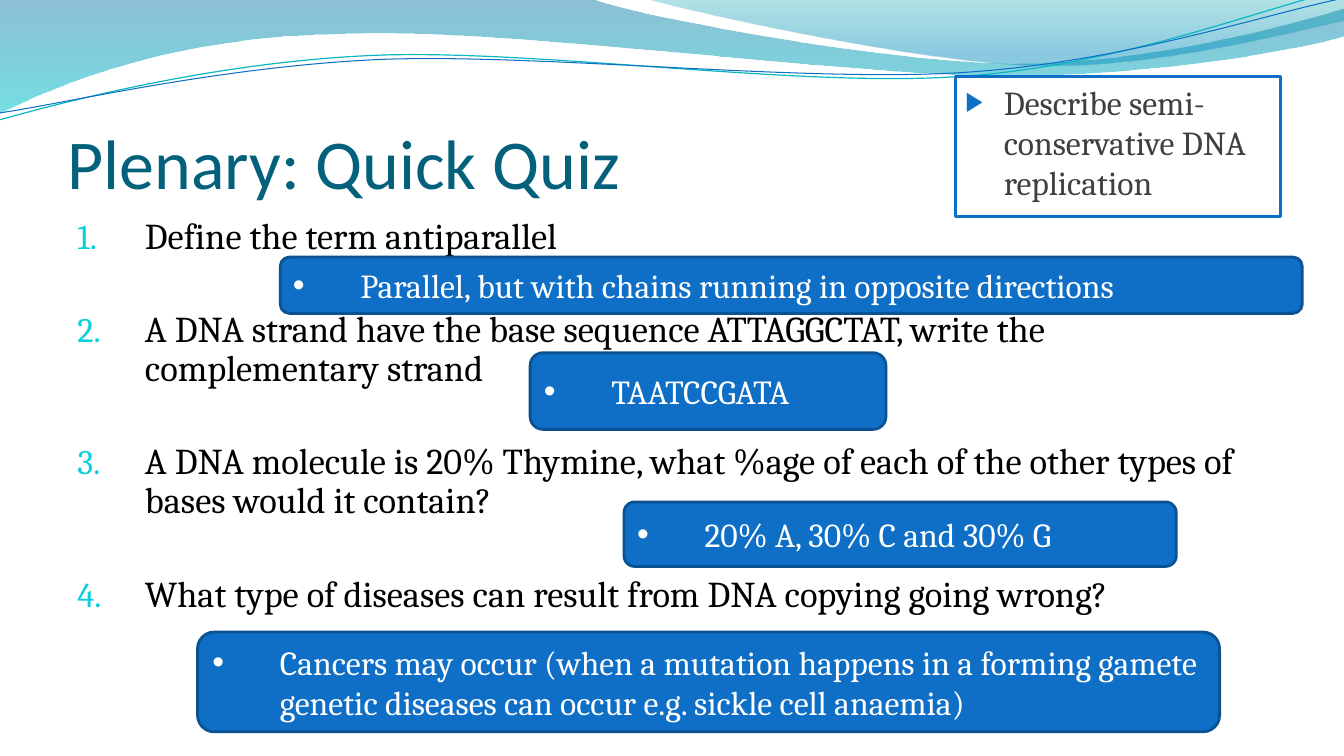
"""Builds the DNA replication quick quiz slide."""
from lxml import etree
from pptx import Presentation
from pptx import util as u
from pptx.dml import color
from pptx.enum import shapes, text
from pptx.oxml import ns

COLOURS = {
    "title": "04617B", "question": "000000", "number": "0BD0D9",
    "answer": "FFFFFF", "answer_fill": "0F6FC6", "answer_edge": "0B5292",
    "objective": "404040", "paper": "FFFFFF", "accent": "0F6FC6",
    "teal_line": "0AB8BF", "deep": "0074A1", "aqua": "00C6CF",
    "sea": "00A1A9", "sky": "008BBF",
}

QUESTIONS = [
    "Define the term antiparallel",
    "A DNA strand have the base sequence ATTAGGCTAT, write the complementary strand",
    "A DNA molecule is 20% Thymine, what %age of each of the other types of bases would it contain?",
    "What type of diseases can result from DNA copying going wrong?",
]

ANSWERS = [
    ((2.78, 2.55, 10.14, 0.56), "Parallel, but with chains running in opposite directions"),
    ((5.26, 3.5, 3.53, 0.76), "TAATCCGATA"),
    ((6.19, 4.98, 5.48, 0.64), "20% A, 30% C and 30% G"),
    ((1.96, 6.27, 10.14, 0.99),
     "Cancers may occur (when a mutation happens in a forming gamete "
     "genetic diseases can occur e.g. sickle cell anaemia)"),
]

BANDS = [
    ([(0, 0), (5.87, -0.01),
      (6.34, 0.17, 8.85, 0.63, 10.11, 0.63), (11.38, 0.63, 12.78, 0.26, 13.33, 0.09),
      (13.35, 0.36), (13.11, 0.44, 11.6, 0.76, 9.94, 0.75),
      (8.29, 0.75, 5.09, 0.28, 3.43, 0.34), (1.72, 0.36, 0.61, 0.83, -0.01, 1.13), (0, 0)],
     [(0, "deep", 45), (1, "aqua", 55)]),
    ([(6.39, -0.01), (6.79, 0.11, 9.09, 0.62, 10.25, 0.65),
      (11.41, 0.69, 12.82, 0.32, 13.33, 0.21), (13.33, 0), (6.39, -0.01)],
     [(0, "sea", 30), (0.8, "sky", 45)]),
]

STRANDS = [
    ([(-0.01, 1.19), (0.64, 1.01, 2.11, 0.62, 3.69, 0.55),
      (5.27, 0.48, 7.9, 0.87, 9.5, 0.76), (11.1, 0.66, 12.52, 0.08, 13.31, -0.1)],
     "teal_line", 0.85),
    ([(0, 1.12), (0.63, 1.03, 2.18, 0.66, 3.78, 0.59),
      (5.37, 0.53, 7.96, 0.82, 9.55, 0.72), (11.15, 0.62, 12.55, 0.14, 13.34, -0.02)],
     "accent", 0.75),
]


def rgb(name):
    """Returns the named colour."""
    return color.RGBColor.from_string(COLOURS[name])


def bend(outline, segments):
    """Turns the straight steps that have control points into cubic curves."""
    steps = list(outline._element.iter(ns.qn("a:lnTo")))
    for step, segment in zip(steps, segments[1:]):
        if len(segment) == 2:
            continue
        step.tag_name = ns.qn("a:cubicBezTo")
        curve = etree.Element(ns.qn("a:cubicBezTo"))
        for x, y in zip(segment[::2], segment[1::2]):
            etree.SubElement(curve, ns.qn("a:pt"), x=str(u.Inches(x) - outline.left),
                             y=str(u.Inches(y) - outline.top))
        step.getparent().replace(step, curve)


def add_outline(slide, segments, close):
    """Draws a freeform along the segments."""
    points = [tuple(map(u.Inches, segment[-2:])) for segment in segments]
    builder = slide.shapes.build_freeform(*points[0])
    builder.add_line_segments(points[1:], close=close)
    outline = builder.convert_to_shape()
    outline.shadow.inherit = False
    bend(outline, segments)
    return outline


def add_band(slide, segments, stops):
    """Draws a wave with a translucent downward gradient."""
    band = add_outline(slide, segments, True)
    band.line.fill.background()
    band.fill.gradient()
    band.fill.gradient_angle = 270
    for stop, (position, name, _) in zip(band.fill.gradient_stops, stops):
        stop.position = position
        stop.color.rgb = rgb(name)
    for tint, (_, _, opacity) in zip(band._element.spPr.iter(ns.qn("a:srgbClr")), stops):
        etree.SubElement(tint, ns.qn("a:alpha"), val=str(opacity * 1000))


def add_strand(slide, segments, name, width):
    """Draws a thin open curve."""
    strand = add_outline(slide, segments, False)
    strand.fill.background()
    strand.line.color.rgb = rgb(name)
    strand.line.width = u.Pt(width)


def add_bullet(paragraph, indent, mark, size=100, name=None):
    """Gives a paragraph a hanging bullet, or a number if mark is None."""
    props = paragraph._p.get_or_add_pPr()
    props.set("marL", str(u.Inches(indent)))
    props.set("indent", str(-u.Inches(indent)))
    if name:
        tint = etree.SubElement(props, ns.qn("a:buClr"))
        etree.SubElement(tint, ns.qn("a:srgbClr"), val=COLOURS[name])
    etree.SubElement(props, ns.qn("a:buSzPct"), val=str(size * 1000))
    if mark:
        etree.SubElement(props, ns.qn("a:buFont"), typeface="Arial")
        etree.SubElement(props, ns.qn("a:buChar"), char=mark)
    else:
        etree.SubElement(props, ns.qn("a:buFont"), typeface="Cambria")
        etree.SubElement(props, ns.qn("a:buAutoNum"), type="arabicPeriod")


def write(paragraph, words, size, name, font="Cambria"):
    """Adds one left-aligned run."""
    paragraph.alignment = text.PP_ALIGN.LEFT
    run = paragraph.add_run()
    run.text = words
    run.font.name = font
    run.font.size = u.Pt(size)
    run.font.color.rgb = rgb(name)


def add_card(slide, kind, place, fill, edge, anchor):
    """Adds a filled, outlined box and returns its first paragraph."""
    card = slide.shapes.add_shape(kind, *map(u.Inches, place))
    card.shadow.inherit = False
    card.fill.solid()
    card.fill.fore_color.rgb = rgb(fill)
    card.line.color.rgb = rgb(edge)
    card.line.width = u.Pt(2)
    card.text_frame.word_wrap = True
    card.text_frame.vertical_anchor = anchor
    return card.text_frame.paragraphs[0]


def add_title(slide, words):
    """Adds the slide heading."""
    heading = slide.shapes.add_textbox(*map(u.Inches, (0.67, 0.77, 12, 1.25))).text_frame
    heading.word_wrap = True
    heading.vertical_anchor = text.MSO_ANCHOR.BOTTOM
    heading.margin_left = heading.margin_right = heading.margin_bottom = 0
    write(heading.paragraphs[0], words, 50, "title", "Calibri")


def add_questions(slide, questions):
    """Adds the numbered questions with room for answers between them."""
    quiz = slide.shapes.add_textbox(*map(u.Inches, (0.67, 2.11, 12, 4.8))).text_frame
    quiz.word_wrap = True
    for index, question in enumerate(questions):
        paragraph = quiz.add_paragraph() if index else quiz.paragraphs[0]
        paragraph.line_spacing = 0.9
        paragraph.space_before = u.Pt(38.5 if index else 0)
        add_bullet(paragraph, 0.67, None, 95, "number")
        write(paragraph, question, 26, "question")


def add_objective(slide, words):
    """Adds the boxed learning objective."""
    objective = add_card(slide, shapes.MSO_SHAPE.RECTANGLE, (9.48, 0.76, 3.22, 1.39),
                         "paper", "accent", text.MSO_ANCHOR.TOP)
    add_bullet(objective, 0.38, "▶", 80, "accent")
    write(objective, words, 24, "objective")


def add_answer(slide, place, words):
    """Adds one rounded answer box."""
    answer = add_card(slide, shapes.MSO_SHAPE.ROUNDED_RECTANGLE, place,
                      "answer_fill", "answer_edge", text.MSO_ANCHOR.MIDDLE)
    add_bullet(answer, 0.67, "•")
    write(answer, words, 24, "answer")


def main():
    """Builds and saves the slide."""
    deck = Presentation()
    deck.slide_width, deck.slide_height = u.Inches(40 / 3), u.Inches(7.5)
    slide = deck.slides.add_slide(deck.slide_layouts[6])
    for band in BANDS:
        add_band(slide, *band)
    for strand in STRANDS:
        add_strand(slide, *strand)
    add_title(slide, "Plenary: Quick Quiz")
    add_questions(slide, QUESTIONS)
    add_objective(slide, "Describe semi-conservative DNA replication")
    for answer in ANSWERS:
        add_answer(slide, *answer)
    deck.save("out.pptx")


if __name__ == "__main__":
    main()
